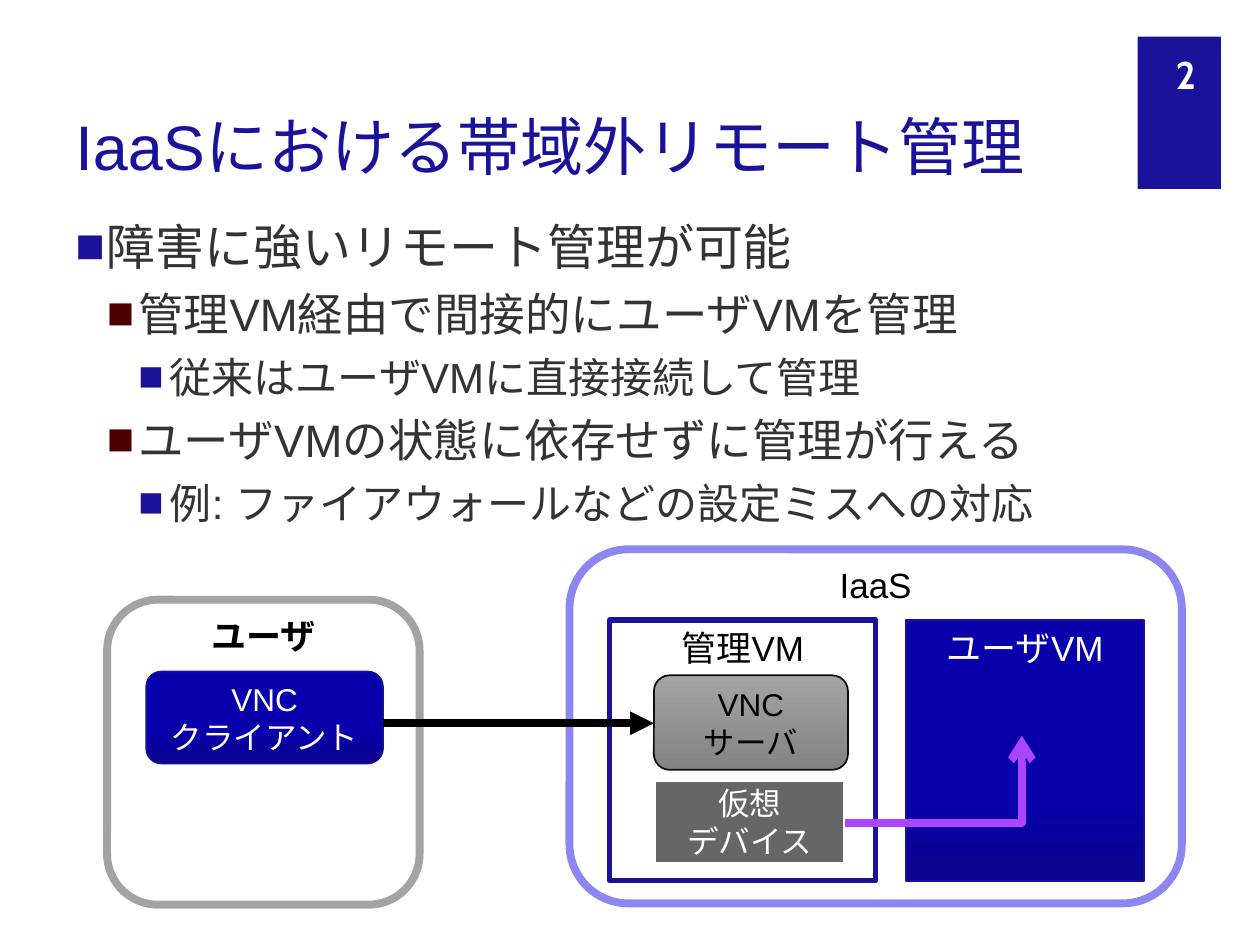
from dataclasses import dataclass

from lxml import etree
from pptx import Presentation
from pptx.dml.color import RGBColor
from pptx.enum.shapes import MSO_CONNECTOR, MSO_SHAPE
from pptx.enum.text import MSO_ANCHOR, PP_ALIGN
from pptx.oxml.ns import qn
from pptx.util import Inches, Pt

RECT, ROUND = MSO_SHAPE.RECTANGLE, MSO_SHAPE.ROUNDED_RECTANGLE
STRAIGHT, ELBOW = MSO_CONNECTOR.STRAIGHT, MSO_CONNECTOR.ELBOW
TOP, MIDDLE, BOTTOM = MSO_ANCHOR.TOP, MSO_ANCHOR.MIDDLE, MSO_ANCHOR.BOTTOM
LEFT, CENTER, RIGHT = PP_ALIGN.LEFT, PP_ALIGN.CENTER, PP_ALIGN.RIGHT

COLORS = {
    "white": "FFFFFF", "black": "000000", "navy": "1A1399", "maroon": "4D0000",
    "body": "333333", "user_line": "A3A3A3", "cloud_line": "8C87F0",
    "blue": "0900AC", "deep_blue": "0C058E", "blue_line": "160F99",
    "gray": "838383", "light_gray": "A4A4A4", "gray_line": "0D0D0D",
    "device": "666666", "purple": "AB45FF",
}


@dataclass
class Box:
    at: tuple[float, float, float, float]
    fills: tuple[str, ...]
    line: str = ""
    width: float = 1
    shape: int = RECT
    text: str = ""
    color: str = "white"
    blend_end: float = 1


@dataclass
class Label:
    text: str
    at: tuple[float, float, float, float]
    size: float = 20
    color: str = "black"
    font: str = "Arial"
    bold: bool = False
    align: int = CENTER
    anchor: int = TOP


@dataclass
class Bullet:
    level: int
    runs: tuple[tuple[str, str], ...]


@dataclass
class Arrow:
    kind: int
    start: tuple[float, float]
    end: tuple[float, float]
    color: str
    head: str


PAGE_TAB = Box((9.03, 0.29, 0.66, 1.21), ("navy",))
HEADINGS = [
    Label("IaaSにおける帯域外リモート管理", (0.5, 0.25, 8.42, 1.25), 36, "navy", align=LEFT, anchor=BOTTOM),
    Label("2", (8.97, 0.39, 0.62, 0.4), 22, "white", "Cabin", True, RIGHT, MIDDLE),
]
BULLETS = [
    Bullet(0, (("障害に強いリモート管理が可能", "Quicksand"),)),
    Bullet(1, (("管理", "Cabin"), ("VM経由で間接的にユーザVMを管理", "Arial"))),
    Bullet(2, (("従来はユーザVMに直接接続して管理", "Arial"),)),
    Bullet(1, (("ユーザVMの状態に依存せずに管理が行える", "Arial"),)),
    Bullet(2, (("例: ファイアウォールなどの設定ミスへの対応", "Arial"),)),
]
LEVEL_SIZES = (28, 26, 24)
LEVEL_MARKS = ("navy", "maroon", "navy")
BLUE_BLEND = ("deep_blue", "blue")
BOXES = [
    Box((0.85, 4.76, 2.48, 2.42), ("white",), "user_line", 4.5, ROUND),
    Box((1.16, 5.33, 1.88, 0.73), BLUE_BLEND, "blue_line", 1, ROUND, "VNC\nクライアント", blend_end=0.35),
    Box((4.52, 4.36, 4.86, 2.81), ("white",), "cloud_line", 4.5, ROUND),
    Box((4.84, 4.92, 2.11, 2.07), ("white",), "navy", 3),
    Box((5.19, 5.36, 1.54, 0.75), ("gray", "light_gray"), "gray_line", 1, ROUND, "VNC\nサーバ", "black"),
    Box((7.19, 4.92, 1.89, 2.07), BLUE_BLEND, "blue_line", blend_end=0.35),
    Box((5.19, 6.19, 1.52, 0.67), ("device",), "white", 2.5, text="仮想\nデバイス"),
]
LABELS = [
    Label("ユーザ", (0.85, 4.83, 2.48, 0.44), bold=True),
    Label("IaaS", (4.52, 4.42, 4.86, 0.44)),
    Label("管理VM", (4.84, 4.92, 2.11, 0.44)),
    Label("ユーザVM", (7.19, 4.92, 1.89, 0.44), color="white"),
]
ARROWS = [
    Arrow(STRAIGHT, (3.04, 5.74), (5.19, 5.74), "black", "triangle"),
    Arrow(ELBOW, (6.71, 6.53), (8.11, 5.84), "purple", "arrow"),
]


def rgb(name: str) -> RGBColor:
    """Look up a named colour."""
    return RGBColor.from_string(COLORS[name])


def style_run(run, size: float, color: str, font: str = "Arial", bold: bool = False) -> None:
    """Format one run of text."""
    run.font.size, run.font.name, run.font.bold = Pt(size), font, bold
    run.font.color.rgb = rgb(color)


def style_text(frame, text: str, align: int, anchor: int, **style) -> None:
    """Fill a text frame and format it evenly."""
    frame.word_wrap, frame.vertical_anchor = True, anchor
    frame.text = text
    for para in frame.paragraphs:
        para.alignment = align
        for run in para.runs:
            style_run(run, **style)


def draw_box(slide, box: Box) -> None:
    """Draw a filled shape with optional outline and text."""
    shape = slide.shapes.add_shape(box.shape, *map(Inches, box.at))
    shape.shadow.inherit = False
    if len(box.fills) == 1:
        shape.fill.solid()
        shape.fill.fore_color.rgb = rgb(box.fills[0])
    else:
        shape.fill.gradient()
        shape.fill.gradient_angle = 90
        for stop, color, position in zip(shape.fill.gradient_stops, box.fills, (0, box.blend_end)):
            stop.color.rgb, stop.position = rgb(color), position
    if box.line:
        shape.line.color.rgb, shape.line.width = rgb(box.line), Pt(box.width)
    else:
        shape.line.fill.background()
    if box.text:
        style_text(shape.text_frame, box.text, CENTER, MIDDLE, size=18, color=box.color)


def draw_label(slide, label: Label) -> None:
    """Draw a text box."""
    frame = slide.shapes.add_textbox(*map(Inches, label.at)).text_frame
    style_text(frame, label.text, label.align, label.anchor, size=label.size,
               color=label.color, font=label.font, bold=label.bold)


def draw_bullets(slide, bullets: list[Bullet]) -> None:
    """Draw the bulleted body text."""
    frame = slide.shapes.add_textbox(*map(Inches, (0.5, 1.67, 9.19, 5.71))).text_frame
    frame.word_wrap = True
    for index, bullet in enumerate(bullets):
        para = frame.add_paragraph() if index else frame.paragraphs[0]
        para.level = bullet.level
        para.space_before = Pt(6 if bullet.level else 18)
        properties = para._p.get_or_add_pPr()
        properties.set("marL", str(Inches(0.25 * (bullet.level + 1))))
        properties.set("indent", str(Inches(-0.25)))
        mark = etree.SubElement(properties, qn("a:buClr"))
        etree.SubElement(mark, qn("a:srgbClr"), val=COLORS[LEVEL_MARKS[bullet.level]])
        etree.SubElement(properties, qn("a:buFont"), typeface="Arial")
        etree.SubElement(properties, qn("a:buChar"), char="■")
        for text, font in bullet.runs:
            run = para.add_run()
            run.text = text
            style_run(run, LEVEL_SIZES[bullet.level], "body", font)


def draw_arrow(slide, arrow: Arrow) -> None:
    """Draw a connector with an arrowhead at its end."""
    points = map(Inches, arrow.start + arrow.end)
    connector = slide.shapes.add_connector(arrow.kind, *points)
    connector.line.color.rgb, connector.line.width = rgb(arrow.color), Pt(4.5)
    etree.SubElement(connector.line._get_or_add_ln(), qn("a:tailEnd"), type=arrow.head)
    properties = connector._element.spPr
    etree.SubElement(properties, qn("a:effectLst"))
    if arrow.kind == ELBOW:
        properties.find(qn("a:prstGeom")).set("prst", "bentConnector2")


def main() -> None:
    """Build the slide and save the deck."""
    deck = Presentation()
    deck.slide_width, deck.slide_height = Inches(10), Inches(7.5)
    slide = deck.slides.add_slide(deck.slide_layouts[6])
    draw_box(slide, PAGE_TAB)
    for heading in HEADINGS:
        draw_label(slide, heading)
    draw_bullets(slide, BULLETS)
    for box in BOXES:
        draw_box(slide, box)
    for label in LABELS:
        draw_label(slide, label)
    for arrow in ARROWS:
        draw_arrow(slide, arrow)
    deck.save("out.pptx")


if __name__ == "__main__":
    main()
